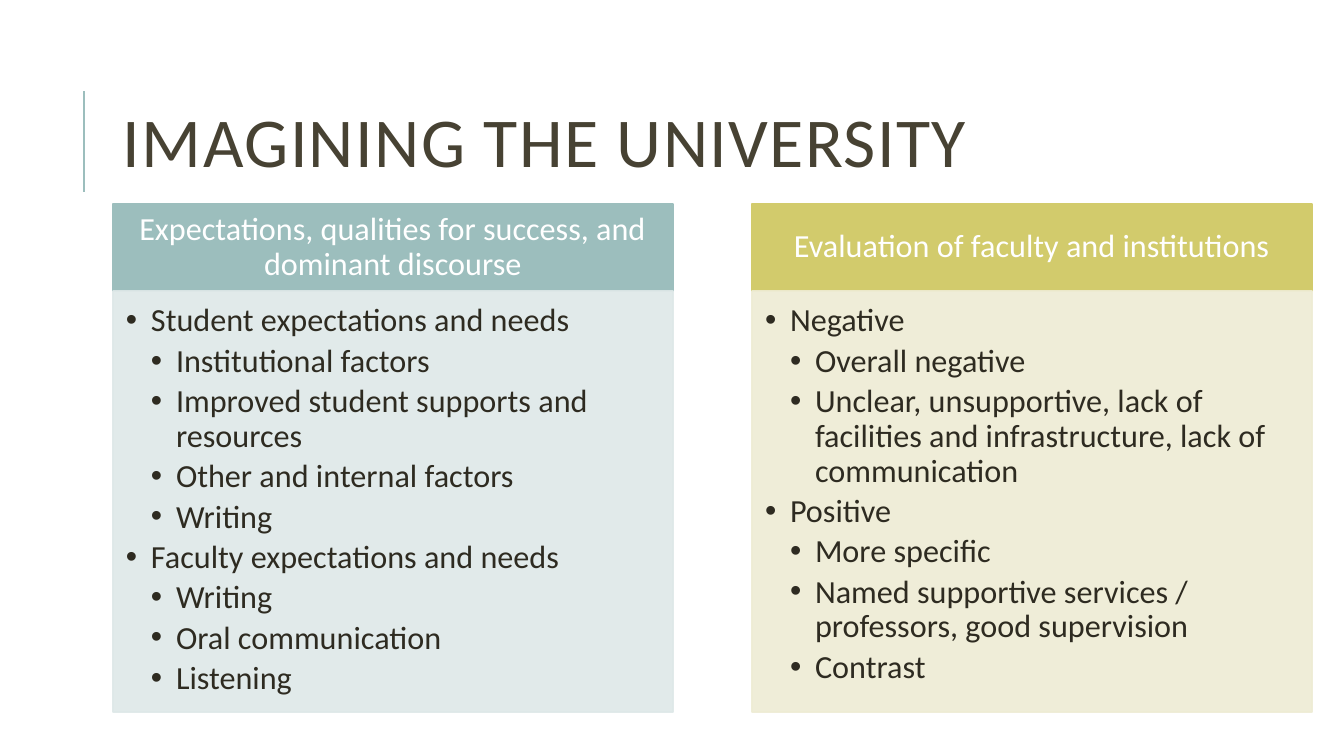
from lxml import etree
from pptx import Presentation, util as u
from pptx.dml.color import RGBColor
from pptx.enum import shapes, text
from pptx.oxml.ns import qn

TEAL, OLIVE = "9CBEBD", "D2CB6C"
PALE_TEAL, PALE_OLIVE = "DEE8E8", "EEECD4"
WHITE, INK, TITLE_INK = "FFFFFF", "2E2B21", "474233"

COLUMNS = [
    ("Expectations, qualities for success, and dominant discourse", TEAL, PALE_TEAL, [
        ("Student expectations and needs", [
            "Institutional factors",
            "Improved student supports and resources",
            "Other and internal factors",
            "Writing"]),
        ("Faculty expectations and needs", [
            "Writing", "Oral communication", "Listening"]),
    ]),
    ("Evaluation of faculty and institutions", OLIVE, PALE_OLIVE, [
        ("Negative", [
            "Overall negative",
            "Unclear, unsupportive, lack of facilities and infrastructure, "
            "lack of communication"]),
        ("Positive", [
            "More specific",
            "Named supportive services / professors, good supervision",
            "Contrast"]),
    ]),
]


def px(length):
    return u.Emu(round(length * 914400 / 100.8))


def rgb(code):
    return RGBColor.from_string(code)


def apply(target, values):
    for name, value in values.items():
        setattr(target, name, value)


class Deck:
    font = "Calibri"
    size = 23
    indent = 25

    def __init__(self):
        self.prs = Presentation()
        apply(self.prs, {"slide_width": px(1344), "slide_height": px(756)})
        self.slide = self.prs.slides.add_slide(self.prs.slide_layouts[5])

    def place(self, shape, box):
        apply(shape, dict(zip(("left", "top", "width", "height"), map(px, box))))

    def frame(self, shape, anchor, insets):
        sides = ("margin_left", "margin_top", "margin_right", "margin_bottom")
        apply(shape.text_frame, {
            "word_wrap": True, "auto_size": text.MSO_AUTO_SIZE.NONE,
            "vertical_anchor": anchor, **dict(zip(sides, map(px, insets)))})
        return shape.text_frame

    def add_words(self, paragraph, words, color, size, **layout):
        run = paragraph.add_run()
        run.text = words
        apply(run.font, {"name": self.font, "size": u.Pt(size)})
        run.font.color.rgb = rgb(color)
        apply(paragraph, layout)
        return run

    def title(self, words, box):
        heading = self.slide.shapes.title
        self.place(heading, box)
        frame = self.frame(heading, text.MSO_ANCHOR.MIDDLE, (10, 5, 10, 5))
        run = self.add_words(frame.paragraphs[0], words, TITLE_INK, 50,
                             alignment=text.PP_ALIGN.LEFT, line_spacing=0.8)
        run._r.get_or_add_rPr().set("spc", "100")

    def rule(self, x, top, bottom, color):
        line = self.slide.shapes.add_connector(
            shapes.MSO_CONNECTOR.STRAIGHT, px(x), px(bottom), px(x), px(top))
        line.line.color.rgb = rgb(color)
        line.line.width = u.Pt(1.5)
        etree.SubElement(line._element.spPr, qn("a:effectLst"))

    def panel(self, box, color, opacity=100):
        panel = self.slide.shapes.add_shape(
            shapes.MSO_SHAPE.RECTANGLE, *map(px, box))
        panel.shadow.inherit = False
        panel.fill.solid()
        panel.fill.fore_color.rgb = rgb(color)
        panel.line.color.rgb = rgb(color)
        panel.line.width = u.Pt(1.25)
        if opacity < 100:
            for tint in panel._element.spPr.iter(qn("a:srgbClr")):
                etree.SubElement(tint, qn("a:alpha"), val=str(opacity * 1000))
        return panel

    def header(self, words, box, color):
        frame = self.frame(self.panel(box, color), text.MSO_ANCHOR.MIDDLE,
                           (18, 10, 18, 10))
        self.add_words(frame.paragraphs[0], words, WHITE, self.size,
                       alignment=text.PP_ALIGN.CENTER, line_spacing=0.9)

    def bullets(self, topics, box, color):
        frame = self.frame(self.panel(box, color, 90), text.MSO_ANCHOR.TOP,
                           (13, 13, 18, 20))
        items = [(level, words) for topic, details in topics
                 for level, words in [(0, topic)] + [(1, d) for d in details]]
        for index, (level, words) in enumerate(items):
            paragraph = frame.add_paragraph() if index else frame.paragraphs[0]
            self.add_words(paragraph, words, INK, self.size, level=level,
                           alignment=text.PP_ALIGN.LEFT, line_spacing=0.9,
                           space_after=u.Pt(4))
            props = paragraph._p.get_or_add_pPr()
            props.set("marL", str(px(self.indent * (level + 1))))
            props.set("indent", str(-px(self.indent)))
            etree.SubElement(props, qn("a:buFont"), typeface="Arial")
            etree.SubElement(props, qn("a:buChar"), char="•")


def main():
    deck = Deck()
    deck.rule(84, 91, 192, TEAL)
    deck.title("IMAGINING THE UNIVERSITY", (113, 65, 1071, 165))
    left, pitch, width = 113, 639, 560
    top, header_height, body_height = 204, 87, 421
    for index, (heading, strong, pale, topics) in enumerate(COLUMNS):
        x = left + index * pitch
        deck.header(heading, (x, top, width, header_height), strong)
        deck.bullets(topics, (x, top + header_height, width, body_height), pale)
    deck.prs.save("out.pptx")


if __name__ == "__main__":
    main()
